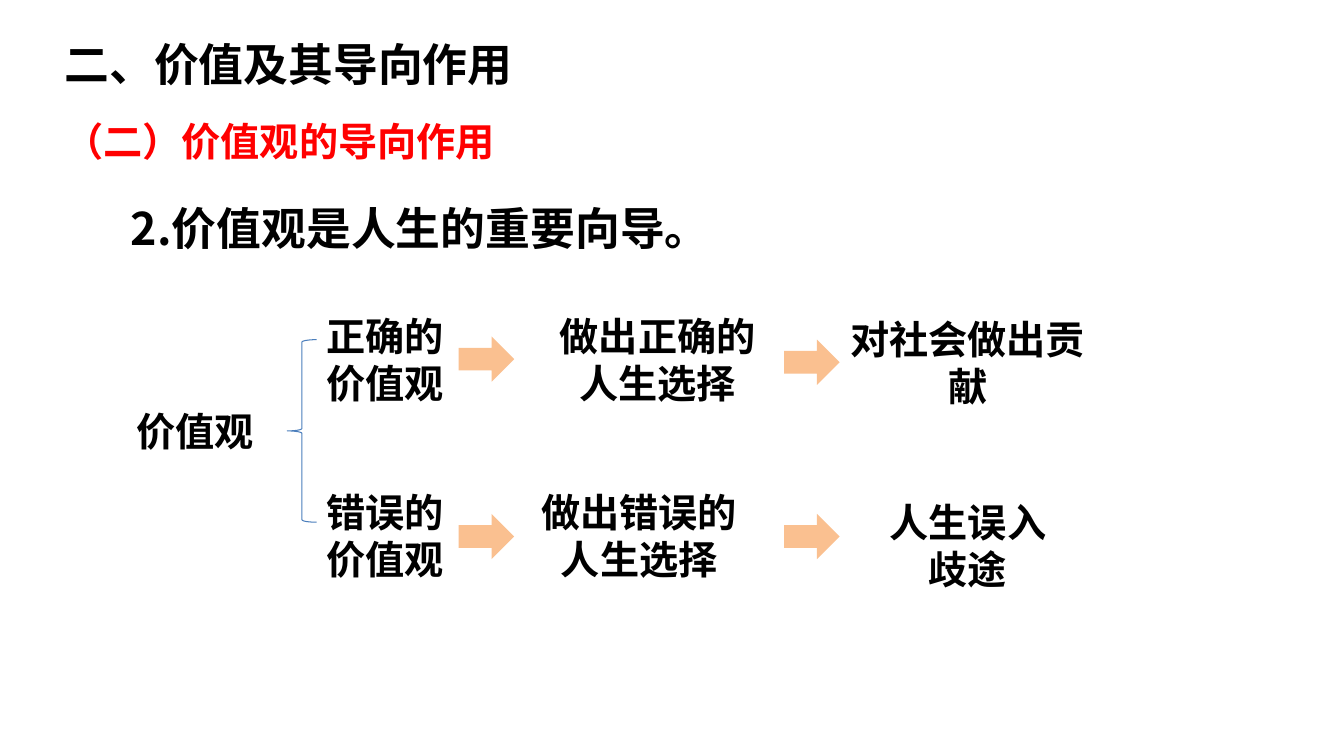
from dataclasses import dataclass

import pptx
import pptx.dml.color
import pptx.enum.shapes
import pptx.enum.text
import pptx.oxml
import pptx.oxml.ns
import pptx.util

Cm = pptx.util.Cm
Pt = pptx.util.Pt
ALIGN = pptx.enum.text.PP_ALIGN
KIND = pptx.enum.shapes.MSO_SHAPE

FONT = "Noto Sans CJK SC"
COLORS = {"black": "000000", "red": "FF0000", "arrow": "FAC090", "brace": "4B7EBC"}


@dataclass
class Label:
    left: float
    top: float
    width: float
    height: float
    lines: list[str]
    center: bool = False
    size: int = 28
    color: str = "black"
    spacing: float = 1.0
    indent: float = 0


@dataclass
class Arrow:
    left: float
    top: float


TITLE = Label(1.37, 0.79, 14.76, 1.63, ["二、价值及其导向作用"], size=32)

LABELS = [
    Label(1.37, 2.82, 11.48, 1.45, ["（二）价值观的导向作用"], color="red"),
    Label(2.31, 4.67, 16, 1.9, ["2.价值观是人生的重要向导。"],
          size=32, spacing=1.2, indent=0.74),
    Label(3.18, 10.13, 4.06, 1.45, ["价值观"]),
    Label(7.98, 7.75, 3.58, 2.64, ["正确的", "价值观"]),
    Label(7.98, 12.19, 3.58, 2.64, ["错误的", "价值观"]),
    Label(12.88, 7.75, 7.39, 2.62, ["做出正确的", "人生选择"], center=True),
    Label(12.95, 12.19, 6.32, 2.64, ["做出错误的", "人生选择"], center=True),
    Label(21.16, 7.82, 6.45, 2.62, ["对社会做出贡献"], center=True),
    Label(20.7, 12.42, 7.39, 2.62, ["人生误入", "歧途"], center=True),
]

ARROWS = [Arrow(11.56, 8.48), Arrow(19.76, 8.56),
          Arrow(11.56, 12.95), Arrow(19.76, 12.95)]


def rgb(name: str) -> pptx.dml.color.RGBColor:
    return pptx.dml.color.RGBColor.from_string(COLORS[name])


def fill_text(shape, label: Label) -> None:
    """Place a text shape and write the label's lines in it."""
    shape.left, shape.top = Cm(label.left), Cm(label.top)
    shape.width, shape.height = Cm(label.width), Cm(label.height)
    frame = shape.text_frame
    frame.word_wrap = True
    frame.auto_size = pptx.enum.text.MSO_AUTO_SIZE.NONE
    frame.vertical_anchor = pptx.enum.text.MSO_ANCHOR.TOP
    frame.text = "\n".join(label.lines)
    for para in frame.paragraphs:
        para.alignment = ALIGN.CENTER if label.center else ALIGN.LEFT
        para.line_spacing = label.spacing
        props = para._p.get_or_add_pPr()
        if label.indent:
            props.set("indent", str(Cm(label.indent)))
        font = para.font
        font.name, font.size, font.bold = FONT, Pt(label.size), True
        font.color.rgb = rgb(label.color)
        asian = pptx.oxml.parse_xml(
            f'<a:ea {pptx.oxml.ns.nsdecls("a")} typeface="{FONT}"/>')
        props.find(pptx.oxml.ns.qn("a:defRPr")).append(asian)


def add_arrow(slide, arrow: Arrow) -> None:
    shape = slide.shapes.add_shape(
        KIND.RIGHT_ARROW, Cm(arrow.left), Cm(arrow.top), Cm(1.4), Cm(1.14))
    shape.shadow.inherit = False
    shape.fill.solid()
    shape.fill.fore_color.rgb = rgb("arrow")
    shape.line.fill.background()


def add_brace(slide) -> None:
    brace = slide.shapes.add_shape(
        KIND.LEFT_BRACE, Cm(7.24), Cm(8.56), Cm(0.74), Cm(4.6))
    brace.shadow.inherit = False
    brace.fill.background()
    brace.line.color.rgb = rgb("brace")
    brace.line.width = Pt(0.75)


def main() -> None:
    deck = pptx.Presentation()
    deck.slide_width, deck.slide_height = Cm(33.87), Cm(19.05)
    slide = deck.slides.add_slide(deck.slide_layouts[5])
    fill_text(slide.shapes.title, TITLE)
    for label in LABELS:
        fill_text(slide.shapes.add_textbox(0, 0, 0, 0), label)
    for arrow in ARROWS:
        add_arrow(slide, arrow)
    add_brace(slide)
    deck.save("out.pptx")


if __name__ == "__main__":
    main()
